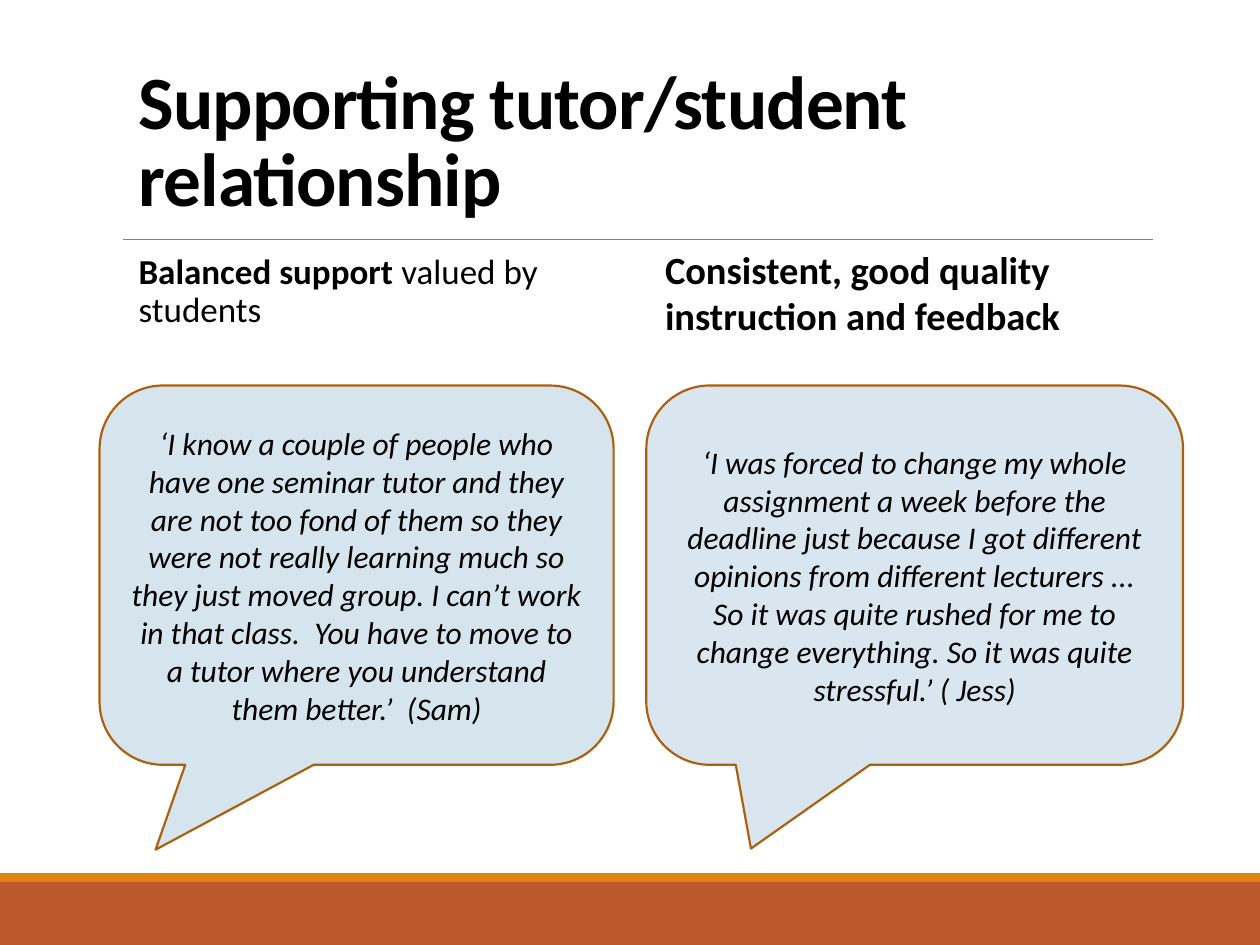
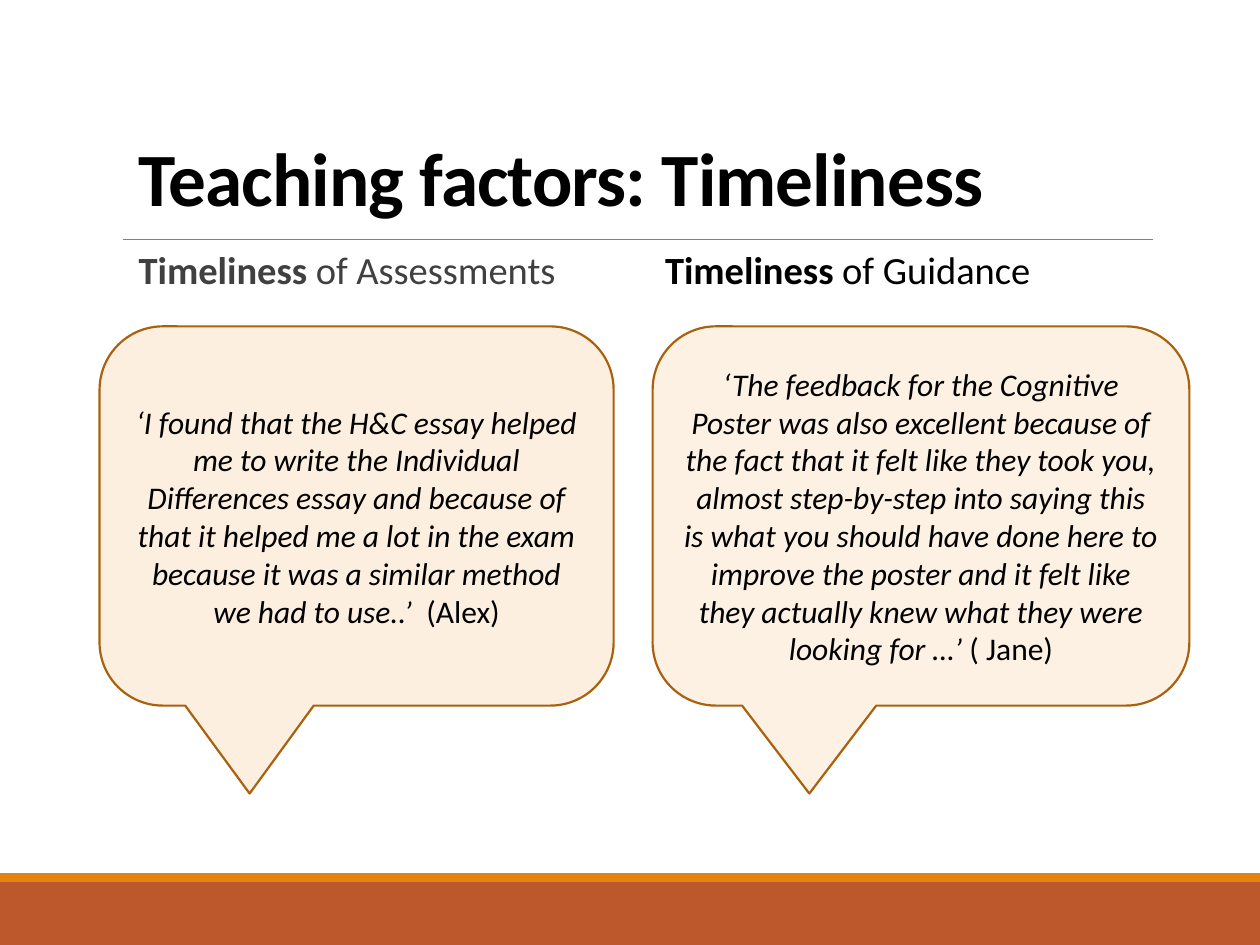
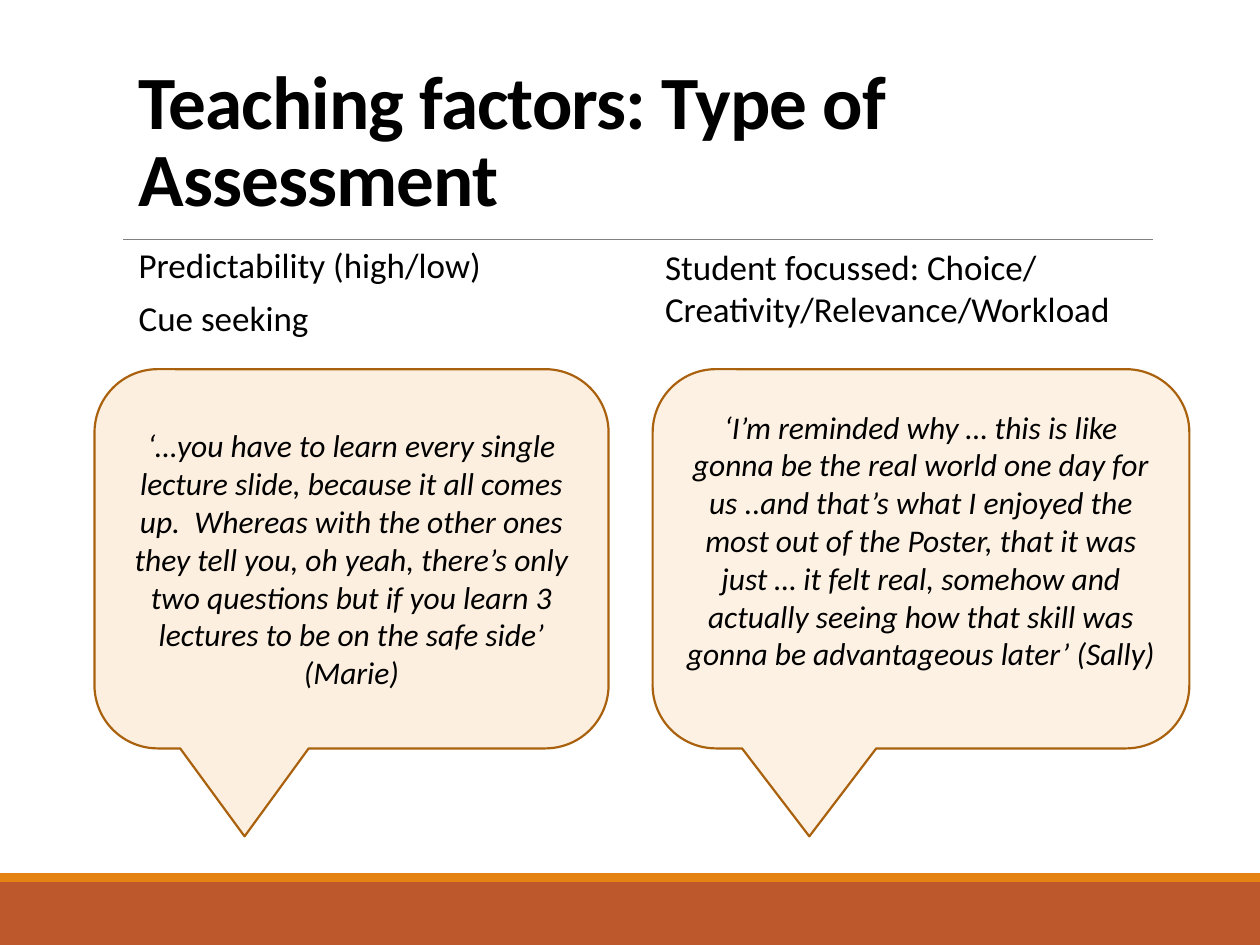
from dataclasses import dataclass, field

from lxml import etree
from pptx import Presentation
from pptx import util as u
from pptx.dml.color import RGBColor
from pptx.enum import shapes as kinds, text as txt
from pptx.oxml.ns import qn
from pptx.slide import Slide, SlideLayout
from pptx.text.text import TextFrame

BLACK = RGBColor(0x00, 0x00, 0x00)
CHARCOAL = RGBColor(0x40, 0x40, 0x40)
GREY = RGBColor(0x80, 0x80, 0x80)
RUST = RGBColor(0xBD, 0x58, 0x2C)
ORANGE = RGBColor(0xE4, 0x83, 0x12)
BROWN = RGBColor(0xA9, 0x61, 0x0D)
BLUE_LEFT = RGBColor(0xD6, 0xE4, 0xEE)
BLUE_RIGHT = RGBColor(0xD9, 0xE6, 0xEF)
CREAM_LEFT = RGBColor(0xFD, 0xEF, 0xDF)
CREAM_RIGHT = RGBColor(0xFD, 0xF1, 0xE3)

FONT = "Calibri"
LEFT_WIDTH, RIGHT_WIDTH, QUOTE_HEIGHT = 4.08, 4.26, 3.01
RIGHT_COLUMN = 5.18
CORNER = 0.167
TAIL = (-0.208, 0.732)

TITLE_FRAME = dict(vertical_anchor=txt.MSO_ANCHOR.BOTTOM, word_wrap=True,
                   auto_size=txt.MSO_AUTO_SIZE.NONE)
LEFT_FRAME = dict(vertical_anchor=txt.MSO_ANCHOR.TOP, word_wrap=True,
                  auto_size=txt.MSO_AUTO_SIZE.NONE,
                  margin_left=u.Inches(0), margin_right=u.Inches(0))
RIGHT_FRAME = dict(word_wrap=True, auto_size=txt.MSO_AUTO_SIZE.SHAPE_TO_FIT_TEXT)
QUOTE_FRAME = dict(vertical_anchor=txt.MSO_ANCHOR.MIDDLE, word_wrap=True)

TITLE_PARAGRAPH = dict(alignment=txt.PP_ALIGN.LEFT, line_spacing=0.85)
LEFT_PARAGRAPH = dict(space_before=u.Pt(12), space_after=u.Pt(2))
QUOTE_PARAGRAPH = dict(alignment=txt.PP_ALIGN.CENTER)


@dataclass
class Span:
    text: str
    bold: bool = False
    italic: bool = False


@dataclass
class Heading:
    lines: list[list[Span]]
    width: float
    height: float
    size: float
    color: RGBColor = BLACK
    spacing: float = 1.0


@dataclass
class Quote:
    spans: list[Span]
    left: float
    fill: RGBColor
    tail: tuple[float, float] = TAIL
    lift: float = 0.0


@dataclass
class Topic:
    title: str
    left_heading: Heading
    right_heading: Heading
    quote_top: float
    left_quote: Quote
    right_quote: Quote


@dataclass
class Band:
    top: float
    height: float
    color: RGBColor


BANDS = [Band(7, 0.5, RUST), Band(6.93, 0.07, ORANGE)]

TOPICS = [
    Topic(
        "Supporting tutor/student relationship",
        Heading([[Span("Balanced support ", bold=True), Span("valued by students")]],
                3.94, 0.7, 20, spacing=0.9),
        Heading([[Span("Consistent, good quality instruction and feedback", bold=True)]],
                3.94, 0.84, 22),
        3.06,
        Quote([Span("‘I know a couple of people who have one seminar tutor and they are not "
                    "too fond of them so they were not really learning much so they just "
                    "moved group. I can’t work in that class.  You have to move to a tutor "
                    "where you understand them better.’  (Sam)", italic=True)],
              0.79, BLUE_LEFT, (-0.391, 0.724)),
        Quote([Span("‘I was forced to change my whole assignment a week before the deadline "
                    "just because I got different opinions from different lecturers ... So "
                    "it was quite rushed for me to change everything. So it was quite "
                    "stressful.’ ( Jess)", italic=True)],
              5.13, BLUE_RIGHT, (-0.305, 0.721)),
    ),
    Topic(
        "Teaching factors: Timeliness",
        Heading([[Span("Timeliness", bold=True), Span(" of Assessments")]],
                4.18, 0.45, 22, CHARCOAL, 0.8),
        Heading([[Span("Timeliness", bold=True), Span(" of Guidance")]], 3.94, 0.47, 22),
        2.59,
        Quote([Span("‘I found that the H&C essay helped me to write the Individual "
                    "Differences essay and because of that it helped me a lot in the exam "
                    "because it was a similar method we had to use..’  ", italic=True),
               Span("(Alex)")],
              0.79, CREAM_LEFT),
        Quote([Span("‘The feedback for the Cognitive Poster was also excellent because of "
                    "the fact that it felt like they took you, almost step-by-step into "
                    "saying this is what you should have done here to improve the poster "
                    "and it felt like they actually knew what they were looking for …’",
                    italic=True),
               Span(" ( Jane)")],
              RIGHT_COLUMN, CREAM_RIGHT),
    ),
    Topic(
        "Teaching factors: Type of Assessment",
        Heading([[Span("Predictability (high/low)")], [Span("Cue seeking")]],
                3.86, 0.8, 20, spacing=0.7),
        Heading([[Span("Student focussed: Choice/")],
                 [Span("Creativity/Relevance/Workload")]], 4.18, 0.77, 20),
        2.93,
        Quote([Span("‘…you have to learn every single lecture slide, because it all comes "
                    "up.  Whereas with the other ones they tell you, oh yeah, there’s only "
                    "two questions but if you learn 3 lectures to be on the safe side’ "
                    "(Marie)", italic=True)],
              0.75, CREAM_LEFT),
        Quote([Span("‘I’m reminded why … this is like gonna be the real world one day for "
                    "us ..and that’s what I enjoyed the most out of the Poster, that it was "
                    "just … it felt real, somehow and actually seeing how that skill was "
                    "gonna be advantageous later’ (Sally)", italic=True)],
              RIGHT_COLUMN, CREAM_RIGHT, lift=0.3),
    ),
]


def apply(target: object, values: dict) -> None:
    for name, value in values.items():
        setattr(target, name, value)


def place(target: object, left: float, top: float, width: float, height: float) -> None:
    apply(target, dict(left=u.Inches(left), top=u.Inches(top),
                       width=u.Inches(width), height=u.Inches(height)))


def write(frame: TextFrame, lines: list[list[Span]], size: float, color: RGBColor,
          frame_values: dict, paragraph_values: dict) -> None:
    apply(frame, frame_values)
    for index, spans in enumerate(lines):
        paragraph = frame.add_paragraph() if index else frame.paragraphs[0]
        apply(paragraph, paragraph_values)
        for span in spans:
            run = paragraph.add_run()
            run.text = span.text
            apply(run.font, dict(name=FONT, size=u.Pt(size), bold=span.bold,
                                 italic=span.italic))
            run.font.color.rgb = color


def add_title(slide: Slide, words: str) -> None:
    title = slide.shapes.title
    place(title, 1, 0.44, 9, 1.37)
    write(title.text_frame, [[Span(words, bold=True)]], 43, BLACK,
          TITLE_FRAME, TITLE_PARAGRAPH)
    for run in title.text_frame.paragraphs[0].runs:
        run.font._element.set("spc", "-50")


def add_left_heading(slide: Slide, heading: Heading) -> None:
    body = slide.placeholders[1]
    place(body, 1, 1.97, heading.width, heading.height)
    write(body.text_frame, heading.lines, heading.size, heading.color, LEFT_FRAME,
          LEFT_PARAGRAPH | dict(line_spacing=heading.spacing))
    for paragraph in body.text_frame.paragraphs:
        properties = paragraph._p.get_or_add_pPr()
        properties.set("marL", str(u.Inches(0.1)))
        properties.set("indent", "0")
        etree.SubElement(properties, qn("a:buNone"))


def add_right_heading(slide: Slide, heading: Heading) -> None:
    box = slide.shapes.add_textbox(u.Inches(RIGHT_COLUMN), u.Inches(1.9),
                                   u.Inches(heading.width), u.Inches(heading.height))
    write(box.text_frame, heading.lines, heading.size, heading.color, RIGHT_FRAME, {})


def add_quote(slide: Slide, quote: Quote, top: float, width: float) -> None:
    bubble = slide.shapes.add_shape(
        kinds.MSO_SHAPE.ROUNDED_RECTANGULAR_CALLOUT, u.Inches(quote.left),
        u.Inches(top), u.Inches(width), u.Inches(QUOTE_HEIGHT))
    for index, value in enumerate((*quote.tail, CORNER)):
        bubble.adjustments[index] = value
    bubble.shadow.inherit = False
    bubble.fill.solid()
    bubble.fill.fore_color.rgb = quote.fill
    bubble.line.color.rgb = BROWN
    bubble.line.width = u.Pt(1.25)
    write(bubble.text_frame, [quote.spans], 18, BLACK,
          QUOTE_FRAME | dict(margin_bottom=u.Inches(0.05 + quote.lift)), QUOTE_PARAGRAPH)


def dress_layout(layout: SlideLayout, slide: Slide) -> None:
    for footer in list(layout.placeholders)[2:]:
        footer.element.getparent().remove(footer.element)
    tree = layout.element.cSld.spTree
    for band in BANDS:
        strip = slide.shapes.add_shape(kinds.MSO_SHAPE.RECTANGLE, u.Inches(0),
                                       u.Inches(band.top), u.Inches(10),
                                       u.Inches(band.height))
        strip.shadow.inherit = False
        strip.fill.solid()
        strip.fill.fore_color.rgb = band.color
        strip.line.fill.background()
        tree.append(strip.element)
    rule = slide.shapes.add_connector(kinds.MSO_CONNECTOR.STRAIGHT, u.Inches(0.98),
                                      u.Inches(1.9), u.Inches(9.15), u.Inches(1.9))
    rule.line.color.rgb = GREY
    rule.line.width = u.Pt(0.5)
    etree.SubElement(rule.element.spPr, qn("a:effectLst"))
    tree.append(rule.element)
    for number, part in enumerate(layout.shapes, start=2):
        part.element.xpath(".//p:cNvPr")[0].set("id", str(number))


def main() -> None:
    deck = Presentation()
    apply(deck, dict(slide_width=u.Inches(10), slide_height=u.Inches(7.5)))
    layout = deck.slide_layouts[1]
    for index, topic in enumerate(TOPICS):
        slide = deck.slides.add_slide(layout)
        if index == 0:
            dress_layout(layout, slide)
        add_title(slide, topic.title)
        add_left_heading(slide, topic.left_heading)
        add_quote(slide, topic.left_quote, topic.quote_top, LEFT_WIDTH)
        add_quote(slide, topic.right_quote, topic.quote_top, RIGHT_WIDTH)
        add_right_heading(slide, topic.right_heading)
    deck.save("out.pptx")


if __name__ == "__main__":
    main()
